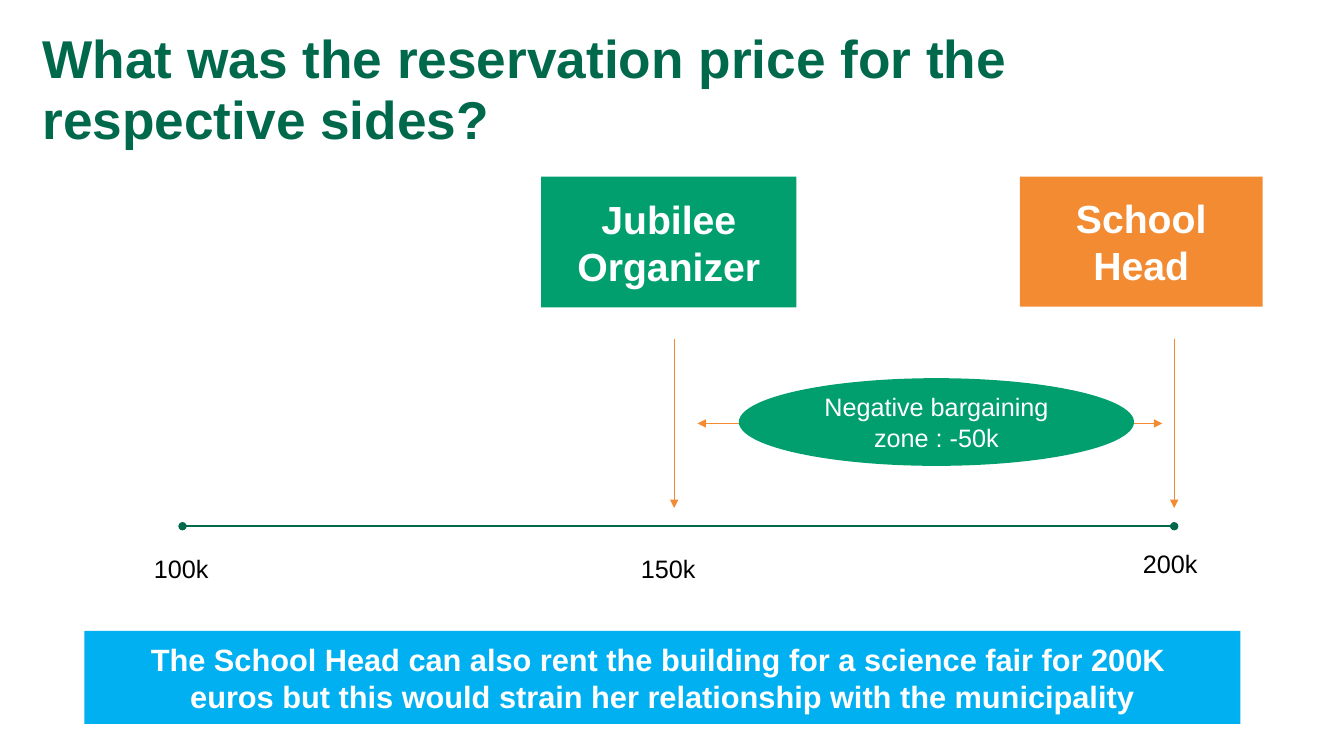
from lxml import etree
from pptx import Presentation
from pptx.dml.color import RGBColor
from pptx.enum.shapes import MSO_CONNECTOR, MSO_SHAPE
from pptx.enum.text import MSO_ANCHOR, PP_ALIGN
from pptx.oxml.ns import qn
from pptx.util import Cm, Pt

RECTANGLE, ELLIPSE = MSO_SHAPE.RECTANGLE, MSO_SHAPE.OVAL
STRAIGHT = MSO_CONNECTOR.STRAIGHT
MIDDLE, CENTER = MSO_ANCHOR.MIDDLE, PP_ALIGN.CENTER

DARK_GREEN, GREEN, ORANGE = "00684B", "019F6E", "F38B32"
BLUE, WHITE, BLACK = "00B0F0", "FFFFFF", "000000"


def color(hex_code):
    return RGBColor.from_string(hex_code)


def write(frame, text, size, hex_code, bold=False):
    """Fill a text frame and format all its runs alike."""
    frame.word_wrap = True
    frame.text = text
    for paragraph in frame.paragraphs:
        for run in paragraph.runs:
            run.font.name = "Arial"
            run.font.size = Pt(size)
            run.font.bold = bold
            run.font.color.rgb = color(hex_code)


prs = Presentation()
prs.slide_width, prs.slide_height = Cm(33.87), Cm(19.05)
slide = prs.slides.add_slide(prs.slide_layouts[6])
shapes = slide.shapes

# Title
title = shapes.add_textbox(Cm(1.07), Cm(0.76), Cm(29.67), Cm(2.62)).text_frame
title.margin_left = title.margin_right = title.margin_top = title.margin_bottom = 0
write(title, "What was the reservation price for the respective sides?", 38, DARK_GREEN, True)
title.paragraphs[0].line_spacing = 0.95

# Price scale, reservation prices and bargaining zone
SCALE_Y, ZONE_Y = 13.26, 10.67
ARROW_TOP, ARROW_END = 8.53, 12.8
SCALE_START, ORGANIZER_X, SCHOOL_X = 4.6, 16.99, 29.59
lines = [
    (SCALE_START, SCALE_Y, SCHOOL_X, SCALE_Y, DARK_GREEN, 1.5, "oval", "oval"),
    (ORGANIZER_X, ARROW_TOP, ORGANIZER_X, ARROW_END, ORANGE, 0.5, "none", "triangle"),
    (SCHOOL_X, ARROW_TOP, SCHOOL_X, ARROW_END, ORANGE, 0.5, "none", "triangle"),
    (17.58, ZONE_Y, 29.29, ZONE_Y, ORANGE, 0.5, "triangle", "triangle"),
]
for x1, y1, x2, y2, hex_code, width, head, tail in lines:
    line = shapes.add_connector(STRAIGHT, Cm(x1), Cm(y1), Cm(x2), Cm(y2))
    line.line.color.rgb = color(hex_code)
    line.line.width = Pt(width)
    outline = line.line._get_or_add_ln()
    etree.SubElement(outline, qn("a:headEnd")).set("type", head)
    etree.SubElement(outline, qn("a:tailEnd")).set("type", tail)
    etree.SubElement(line._element.spPr, qn("a:effectLst"))

for price, left, top in [("100k", 3.63, 13.82), ("150k", 15.9, 13.82), ("200k", 28.55, 13.69)]:
    label = shapes.add_textbox(Cm(left), Cm(top), Cm(2.08), Cm(1.02))
    write(label.text_frame, price, 18, BLACK)

# Parties, bargaining zone and closing remark
blocks = [
    (RECTANGLE, 13.64, 4.45, 6.43, 3.3, GREEN, "Jubilee Organizer", 28, True),
    (RECTANGLE, 25.7, 4.45, 6.12, 3.28, ORANGE, "School\nHead", 28, True),
    (ELLIPSE, 18.62, 9.53, 9.96, 2.21, GREEN, "Negative bargaining zone : -50k", 18, False),
    (RECTANGLE, 2.13, 15.9, 29.13, 2.34, BLUE,
     "The School Head can also rent the building for a science fair for 200K \n"
     "euros but this would strain her relationship with the municipality", 22, True),
]
for kind, left, top, width, height, fill, text, size, bold in blocks:
    block = shapes.add_shape(kind, Cm(left), Cm(top), Cm(width), Cm(height))
    block.shadow.inherit = False
    block.fill.solid()
    block.fill.fore_color.rgb = color(fill)
    block.line.fill.background()
    write(block.text_frame, text, size, WHITE, bold)
    block.text_frame.vertical_anchor = MIDDLE
    for paragraph in block.text_frame.paragraphs:
        paragraph.alignment = CENTER

prs.save("out.pptx")
